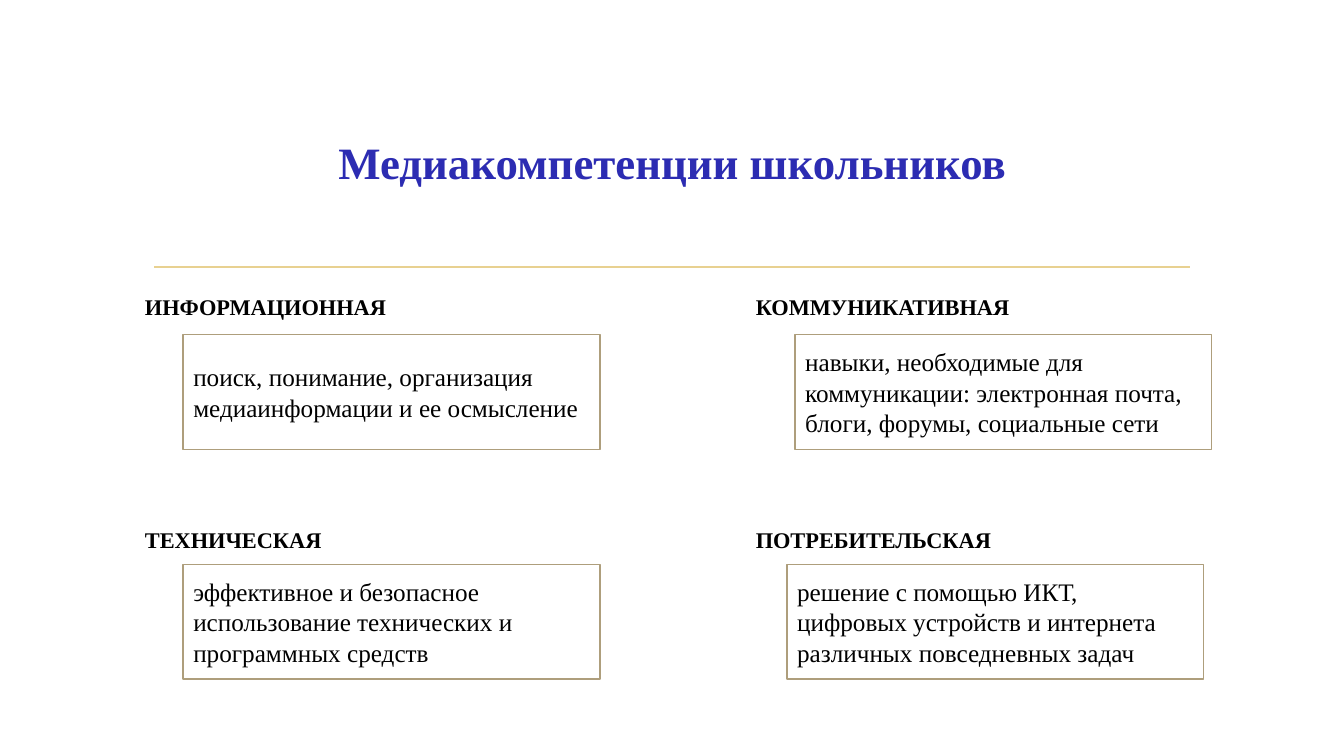
from lxml.etree import SubElement
from pptx import Presentation
from pptx.dml.color import RGBColor as Color
from pptx.enum.shapes import MSO_CONNECTOR as Connector, MSO_SHAPE as Shape
from pptx.enum.text import MSO_ANCHOR as Anchor, MSO_AUTO_SIZE as AutoSize, PP_ALIGN as Align
from pptx.oxml.ns import qn
from pptx.util import Pt

COLORS = {
    "title": "2C2CB2",
    "text": "000000",
    "fill": "FFFFFF",
    "border": "AE9E7C",
    "rule": "E8D191",
}

# Heading left, heading top, box left, box top, heading, description
COMPETENCES = [
    (96.5, 205.9, 131, 239, "ИНФОРМАЦИОННАЯ",
     "поиск, понимание, организация медиаинформации и ее осмысление"),
    (532.8, 205.9, 568.1, 239, "КОММУНИКАТИВНАЯ",
     "навыки, необходимые для коммуникации: электронная почта, блоги, форумы, социальные сети"),
    (96.5, 372.2, 131, 403.2, "ТЕХНИЧЕСКАЯ",
     "эффективное и безопасное использование технических и программных средств"),
    (532.8, 372.2, 562.3, 403.2, "ПОТРЕБИТЕЛЬСКАЯ",
     "решение с помощью ИКТ, цифровых устройств и интернета различных повседневных задач"),
]


class SlideBuilder:
    font = "Times New Roman"
    line_width = Pt(1.25)

    def __init__(self, page):
        self.page = page

    def color(self, name):
        return Color.from_string(COLORS[name])

    def add_text(self, shape, text, size, color="text", bold=False,
                 align=Align.LEFT, anchor=Anchor.MIDDLE):
        frame = shape.text_frame
        frame.word_wrap = True
        frame.auto_size = AutoSize.NONE
        frame.vertical_anchor = anchor
        para = frame.paragraphs[0]
        para.alignment = align
        span = para.add_run()
        span.text = text
        span.font.name = self.font
        span.font.size = Pt(size)
        span.font.bold = bold
        span.font.color.rgb = self.color(color)

    def title(self, text, left, top, width, height):
        title = self.page.shapes.title
        title.left, title.top = Pt(left), Pt(top)
        title.width, title.height = Pt(width), Pt(height)
        self.add_text(title, text, 32, "title", bold=True, align=Align.CENTER)

    def rule(self, left, right, top):
        line = self.page.shapes.add_connector(
            Connector.STRAIGHT, Pt(left), Pt(top), Pt(right), Pt(top))
        line.line.color.rgb = self.color("rule")
        line.line.width = self.line_width
        SubElement(line._element.spPr, qn("a:effectLst"))

    def rectangle(self, left, top, width, height):
        box = self.page.shapes.add_shape(
            Shape.RECTANGLE, Pt(left), Pt(top), Pt(width), Pt(height))
        box.shadow.inherit = False
        box.fill.solid()
        box.fill.fore_color.rgb = self.color("fill")
        return box

    def heading(self, text, left, top):
        box = self.rectangle(left, top, 221, 65.5)
        box.line.fill.background()
        self.add_text(box, text, 16, bold=True, anchor=Anchor.TOP)

    def description(self, text, left, top):
        box = self.rectangle(left, top, 297.4, 82.1)
        box.line.color.rgb = self.color("border")
        box.line.width = self.line_width
        self.add_text(box, text, 18)


def main():
    deck = Presentation()
    deck.slide_width, deck.slide_height = Pt(960), Pt(540)
    builder = SlideBuilder(deck.slides.add_slide(deck.slide_layouts[5]))

    # Title and the rule under it
    builder.title("Медиакомпетенции школьников", 77.8, 39.6, 805, 151.2)
    builder.rule(110.2, 850.3, 190.8)

    # Four competences, each a heading with a framed description
    for heading_left, heading_top, box_left, box_top, heading, description in COMPETENCES:
        builder.heading(heading, heading_left, heading_top)
        builder.description(description, box_left, box_top)

    deck.save("out.pptx")


if __name__ == "__main__":
    main()
